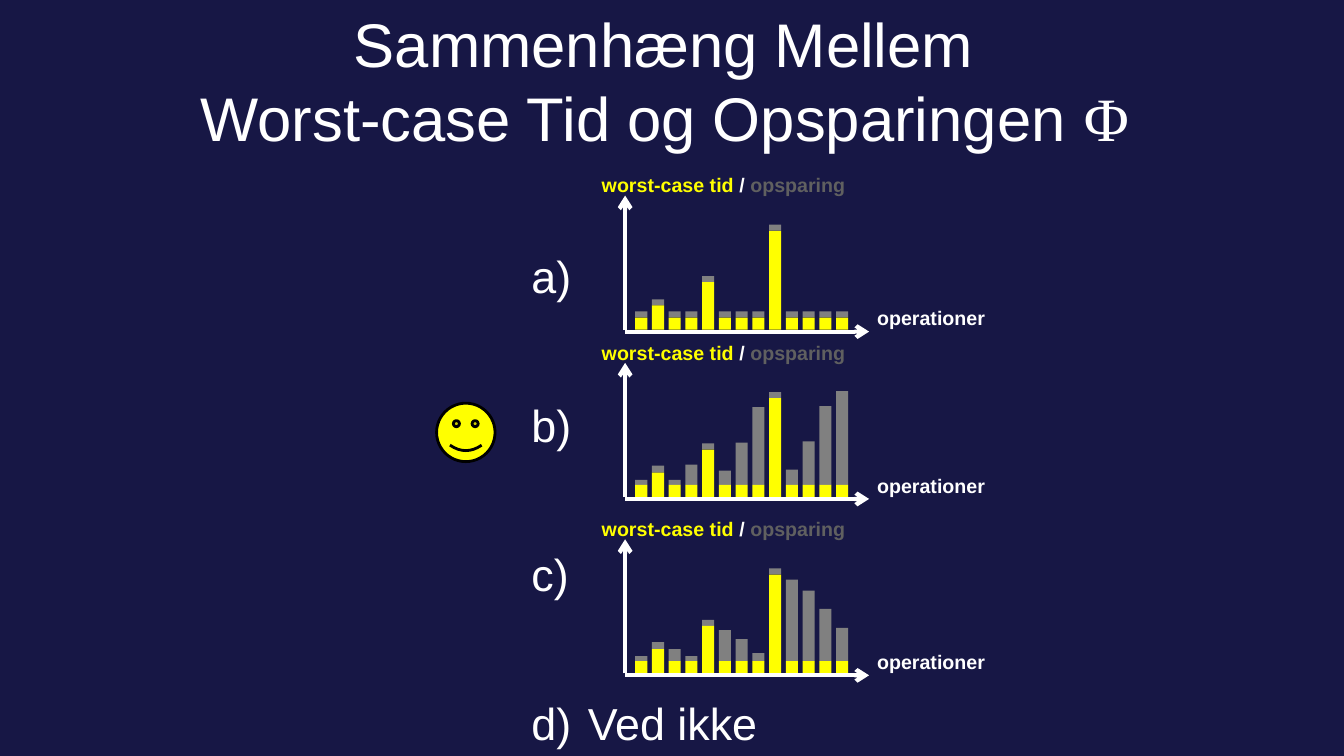
import pptx
import pptx.util
import pptx.dml.color
import pptx.enum.shapes
import pptx.enum.text
import pptx.oxml
import pptx.oxml.ns

Inches, Pt = pptx.util.Inches, pptx.util.Pt
Shape = pptx.enum.shapes.MSO_SHAPE
Align = pptx.enum.text.PP_ALIGN

COLORS = {"background": "171745", "text": "FFFFFF", "time": "FFFF00",
          "saving": "808080", "saving label": "606060", "outline": "000000"}
LABEL_FONT = {"name": "Arial", "size": Pt(14), "bold": True}
TITLE_FONT = {"name": "Arial", "size": Pt(44)}
BODY_FONT = {"name": "Arial", "size": Pt(32)}

# Bar heights in inches, one per operation
TIMES = [0.12, 0.24, 0.12, 0.12, 0.47] + [0.12] * 3 + [0.98] + [0.12] * 4
SAVINGS = [
    [0.06] * len(TIMES),
    [0.05, 0.07, 0.05, 0.2, 0.06, 0.14, 0.42, 0.77, 0.06, 0.15, 0.43, 0.78, 0.93],
    [0.05, 0.07, 0.12, 0.05, 0.06, 0.31, 0.22, 0.08, 0.06, 0.81, 0.7, 0.52, 0.33],
]
PANEL_LEFT, PANEL_WIDTH = 5.87, 4
PANEL_TOPS = [1.67, 3.33, 5.08]
AXIS_INSET, AXIS_WIDTH, AXIS_HEIGHT = 0.33, 2.42, 1.33
BASELINE = 1.6
BAR_INSET, BAR_WIDTH, BAR_PITCH = 0.43, 0.12, 0.166
LABEL_HEIGHT, OPERATIONS_TOP = 0.33, 1.32


def rgb(name):
    return pptx.dml.color.RGBColor.from_string(COLORS[name])


def place(shape, left, top, width, height):
    box = {"left": left, "top": top, "width": width, "height": height}
    for name, value in box.items():
        setattr(shape, name, Inches(value))


def add_run(paragraph, text, font, color="text"):
    run = paragraph.add_run()
    run.text = text
    for name, value in font.items():
        setattr(run.font, name, value)
    run.font.color.rgb = rgb(color)


def add_label(slide, left, top, width, pieces, alignment):
    label = slide.shapes.add_textbox(*map(Inches, (left, top, width, LABEL_HEIGHT)))
    label.text_frame.word_wrap = True
    paragraph = label.text_frame.paragraphs[0]
    paragraph.alignment = alignment
    for text, color in pieces:
        add_run(paragraph, text, LABEL_FONT, color)


def add_bar(slide, left, bottom, height, color):
    bar = slide.shapes.add_shape(
        Shape.RECTANGLE, *map(Inches, (left, bottom - height, BAR_WIDTH, height)))
    bar.shadow.inherit = False
    bar.fill.solid()
    bar.fill.fore_color.rgb = rgb(color)
    bar.line.fill.background()


def add_axis(slide, *ends):
    axis = slide.shapes.add_connector(
        pptx.enum.shapes.MSO_CONNECTOR.STRAIGHT, *map(Inches, ends))
    axis.line.color.rgb = rgb("text")
    axis.line.width = Pt(3)
    arrowhead = pptx.oxml.parse_xml(
        f'<a:tailEnd {pptx.oxml.ns.nsdecls("a")} type="arrow"/>')
    axis.line._get_or_add_ln().append(arrowhead)
    axis._element.spPr.append(
        pptx.oxml.parse_xml(f'<a:effectLst {pptx.oxml.ns.nsdecls("a")}/>'))


def add_panel(slide, left, top, width, savings):
    """Draw the time and saving of each operation above a pair of axes."""
    base = top + BASELINE
    add_label(slide, left, top, width,
              [("worst-case tid ", "time"), ("/ ", "text"),
               ("opsparing", "saving label")], Align.LEFT)
    add_label(slide, left + width / 2, top + OPERATIONS_TOP, width / 2,
              [("operationer", "text")], Align.RIGHT)
    for index, (time, saving) in enumerate(zip(TIMES, savings)):
        bar_left = left + BAR_INSET + index * BAR_PITCH
        add_bar(slide, bar_left, base - time, saving, "saving")
        add_bar(slide, bar_left, base, time, "time")
    origin = left + AXIS_INSET
    add_axis(slide, origin, base, origin, base - AXIS_HEIGHT)
    add_axis(slide, origin, base + 0.02, origin + AXIS_WIDTH, base + 0.02)


def fill_title(title, *box):
    place(title, *box)
    frame = title.text_frame
    frame.auto_size = pptx.enum.text.MSO_AUTO_SIZE.NONE
    frame.vertical_anchor = pptx.enum.text.MSO_ANCHOR.MIDDLE
    paragraph = frame.paragraphs[0]
    paragraph.alignment = Align.CENTER
    add_run(paragraph, "Sammenhæng Mellem ", TITLE_FONT)
    paragraph.add_line_break()
    add_run(paragraph, "Worst-case Tid og Opsparingen ", TITLE_FONT)
    add_run(paragraph, "Φ ", {**TITLE_FONT, "name": "Times New Roman"})


def fill_answers(body, *box):
    """Letter the answers; the first three stand beside their panels."""
    place(body, *box)
    frame = body.text_frame
    frame.auto_size = pptx.enum.text.MSO_AUTO_SIZE.NONE
    for index, answer in enumerate([" "] * len(SAVINGS) + ["Ved ikke"]):
        paragraph = frame.add_paragraph() if index else frame.paragraphs[0]
        paragraph.space_before, paragraph.space_after = Pt(8), Pt(60)
        add_run(paragraph, answer, BODY_FONT)
        properties = paragraph._p.get_or_add_pPr()
        properties.set("marL", str(Inches(0.56)))
        properties.set("indent", str(-Inches(0.56)))
        for bullet in ('buFont typeface="Arial"', 'buAutoNum type="alphaLcParenR"'):
            tag, attribute = bullet.split(" ", 1)
            properties.append(pptx.oxml.parse_xml(
                f'<a:{tag} {pptx.oxml.ns.nsdecls("a")} {attribute}/>'))


def add_smiley(slide, *box):
    smiley = slide.shapes.add_shape(Shape.SMILEY_FACE, *map(Inches, box))
    smiley.shadow.inherit = False
    smiley.adjustments[0] = 0.047
    smiley.fill.solid()
    smiley.fill.fore_color.rgb = rgb("time")
    smiley.line.color.rgb = rgb("outline")
    smiley.line.width = Pt(2)


def main():
    presentation = pptx.Presentation()
    presentation.slide_width = Inches(13.33)
    presentation.slide_height = Inches(7.5)
    slide = presentation.slides.add_slide(presentation.slide_layouts[1])
    slide.background.fill.solid()
    slide.background.fill.fore_color.rgb = rgb("background")
    fill_title(slide.shapes.title, 1.67, 0.17, 10, 1.25)
    fill_answers(slide.placeholders[1], 5.17, 2.42, 2.75, 3.58)
    for top, savings in zip(PANEL_TOPS, SAVINGS):
        add_panel(slide, PANEL_LEFT, top, PANEL_WIDTH, savings)
    add_smiley(slide, 4.33, 4, 0.58, 0.58)
    presentation.save("out.pptx")


if __name__ == "__main__":
    main()
